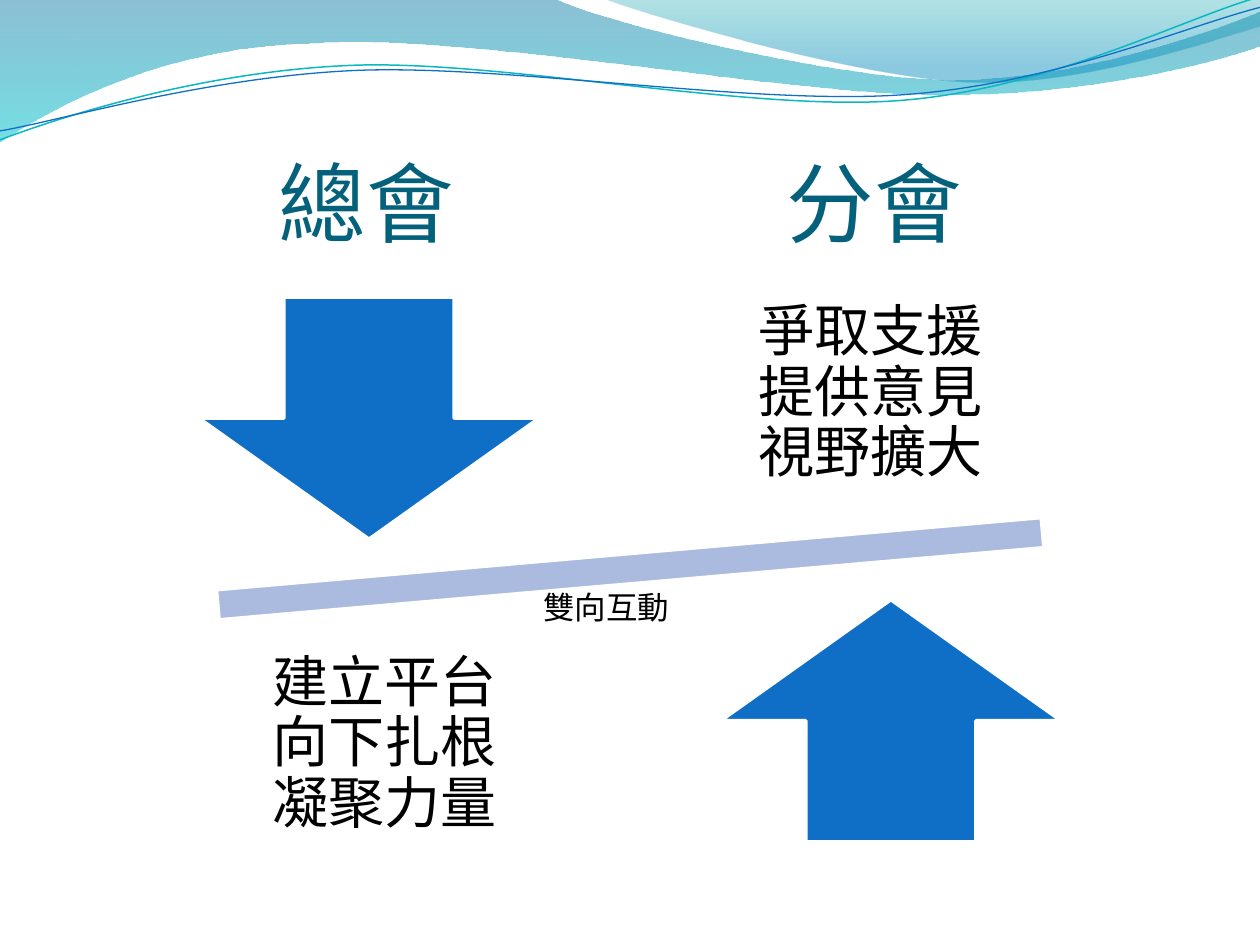
import lxml.etree
import pptx
import pptx.dml.color
import pptx.enum.shapes
import pptx.enum.text
import pptx.oxml.ns
import pptx.util

Cm = pptx.util.Cm
Pt = pptx.util.Pt
RGBColor = pptx.dml.color.RGBColor
MSO_SHAPE = pptx.enum.shapes.MSO_SHAPE
PP_ALIGN = pptx.enum.text.PP_ALIGN
MSO_ANCHOR = pptx.enum.text.MSO_ANCHOR
MSO_AUTO_SIZE = pptx.enum.text.MSO_AUTO_SIZE
qn = pptx.oxml.ns.qn

BLUE = RGBColor(0x0F, 0x6F, 0xC6)
TEAL = RGBColor(0x0A, 0xB8, 0xBF)
LAVENDER = RGBColor(0xAB, 0xBB, 0xDF)
WHITE = RGBColor(0xFF, 0xFF, 0xFF)
BLACK = RGBColor(0, 0, 0)
TITLE = RGBColor(0x04, 0x61, 0x7B)
WAVE_TOP = RGBColor(0x00, 0x74, 0xA1)
WAVE_BOTTOM = RGBColor(0x00, 0xC6, 0xCF)
CREST_TOP = RGBColor(0x00, 0xA1, 0xA9)
CREST_BOTTOM = RGBColor(0x00, 0x8B, 0xBF)


def add_curve(shapes, segments, close):
    anchors = [(Cm(seg[-2]), Cm(seg[-1])) for seg in segments]
    fb = shapes.build_freeform(*anchors[0], scale=1.0)
    fb.add_line_segments(anchors[1:], close=close)
    sp = fb.convert_to_shape()
    sp.shadow.inherit = False
    lines = list(sp.element.spPr.iter(qn("a:lnTo")))
    for line, seg in zip(lines, segments[1:]):
        if len(seg) == 2:
            continue
        line.tag = qn("a:cubicBezTo")
        for i in (2, 0):
            pt = lxml.etree.Element(qn("a:pt"))
            pt.set("x", str(Cm(seg[i]) - sp.left))
            pt.set("y", str(Cm(seg[i + 1]) - sp.top))
            line.insert(0, pt)
    return sp


def style_runs(p, size, font, color):
    for r in p.runs:
        r.font.size = Pt(size)
        r.font.name = font
        r.font.color.rgb = color


prs = pptx.Presentation()
prs.slide_width, prs.slide_height = Cm(25.4), Cm(19.05)
s = prs.slides.add_slide(prs.slide_layouts[5])

bands = [
    ([(0, 0), (11.18, -0.03), (12.09, 0.43, 16.87, 1.6, 19.25, 1.6),
      (21.67, 1.6, 24.33, 0.66, 25.4, 0.23), (25.43, 0.91),
      (24.97, 1.12, 22.1, 1.93, 18.95, 1.91), (15.8, 1.91, 9.7, 0.71, 6.53, 0.86),
      (3.28, 0.91, 1.17, 2.11, -0.03, 2.87)],
     [(0, WAVE_TOP, 45), (1, WAVE_BOTTOM, 55)]),
    ([(12.17, -0.03), (12.93, 0.28, 17.32, 1.57, 19.53, 1.65),
      (21.74, 1.75, 24.41, 0.81, 25.4, 0.53), (25.4, 0)],
     [(0, CREST_TOP, 30), (0.8, CREST_BOTTOM, 45)]),
]
for segments, stops in bands:
    sp = add_curve(s.shapes, segments, True)
    sp.line.fill.background()
    sp.fill.gradient()
    sp.fill.gradient_angle = 270
    for stop, (position, color, _) in zip(sp.fill.gradient_stops, stops):
        stop.position = position
        stop.color.rgb = color
    for clr, (_, _, opacity) in zip(sp.element.spPr.iter(qn("a:srgbClr")), stops):
        lxml.etree.SubElement(clr, qn("a:alpha")).set("val", str(opacity * 1000))

ripples = [
    ([(0, 2.82), (1.22, 2.36, 4.01, 1.45, 7.04, 1.32),
      (10.03, 1.19, 15.06, 2.26, 18.11, 2.03), (21.16, 1.8, 23.83, 0.38, 25.35, -0.05)],
     TEAL, 0.85),
    ([(0, 2.64), (1.19, 2.44, 4.17, 1.55, 7.19, 1.42),
      (10.24, 1.3, 15.16, 2.13, 18.21, 1.91), (21.23, 1.7, 23.9, 0.53, 25.4, 0.15)],
     BLUE, 0.75),
]
for segments, color, width in ripples:
    sp = add_curve(s.shapes, segments, False)
    sp.fill.background()
    sp.line.color.rgb = color
    sp.line.width = Pt(width)

figures = [
    (MSO_SHAPE.MATH_MINUS, 1.35, 10.17, 22.71, 2.59, 355, LAVENDER),
    (MSO_SHAPE.DOWN_ARROW, 4.01, 5.99, 6.86, 4.88, 0, BLUE),
    (MSO_SHAPE.UP_ARROW, 14.53, 12.09, 6.86, 4.88, 0, BLUE),
]
for kind, x, y, w, h, rotation, color in figures:
    sp = s.shapes.add_shape(kind, Cm(x), Cm(y), Cm(w), Cm(h))
    sp.rotation = rotation
    sp.shadow.inherit = False
    sp.fill.solid()
    sp.fill.fore_color.rgb = color
    sp.line.color.rgb = WHITE
    sp.line.width = Pt(2)

goals = [
    (13.89, 5.38, "爭取支援 提供意見 視野擴大"),
    (4.09, 12.45, "建立平台 向下扎根 凝聚力量"),
]
for x, y, text in goals:
    sp = s.shapes.add_textbox(Cm(x), Cm(y), Cm(7.32), Cm(5.13))
    tf = sp.text_frame
    tf.word_wrap = True
    tf.vertical_anchor = MSO_ANCHOR.MIDDLE
    tf.margin_top = tf.margin_bottom = Cm(0.64)
    tf.margin_left = tf.margin_right = Cm(0.9)
    tf.text = text
    p = tf.paragraphs[0]
    p.alignment = PP_ALIGN.CENTER
    p.line_spacing = 0.9
    style_runs(p, 32, "Vollkorn", BLACK)

sp = s.shapes.title
sp.left, sp.top, sp.width, sp.height = Cm(1.27), Cm(1.95), Cm(22.86), Cm(3.18)
tf = sp.text_frame
tf.auto_size = MSO_AUTO_SIZE.NONE
tf.vertical_anchor = MSO_ANCHOR.BOTTOM
tf.margin_left = tf.margin_right = tf.margin_bottom = 0
tf.margin_top = Cm(0.13)
tf.text = "\t總會\t分會"
p = tf.paragraphs[0]
p.alignment = PP_ALIGN.LEFT
tabs = lxml.etree.SubElement(p._p.get_or_add_pPr(), qn("a:tabLst"))
for position in (4.35, 14.59):
    tab = lxml.etree.SubElement(tabs, qn("a:tab"))
    tab.set("pos", str(Cm(position)))
    tab.set("algn", "l")
style_runs(p, 50, "Calibri", TITLE)

sp = s.shapes.add_textbox(Cm(10.7), Cm(11.73), Cm(3.4), Cm(1.02))
tf = sp.text_frame
tf.word_wrap = True
tf.auto_size = MSO_AUTO_SIZE.SHAPE_TO_FIT_TEXT
tf.text = "雙向互動"
style_runs(tf.paragraphs[0], 18, "Vollkorn", BLACK)

prs.save("out.pptx")
